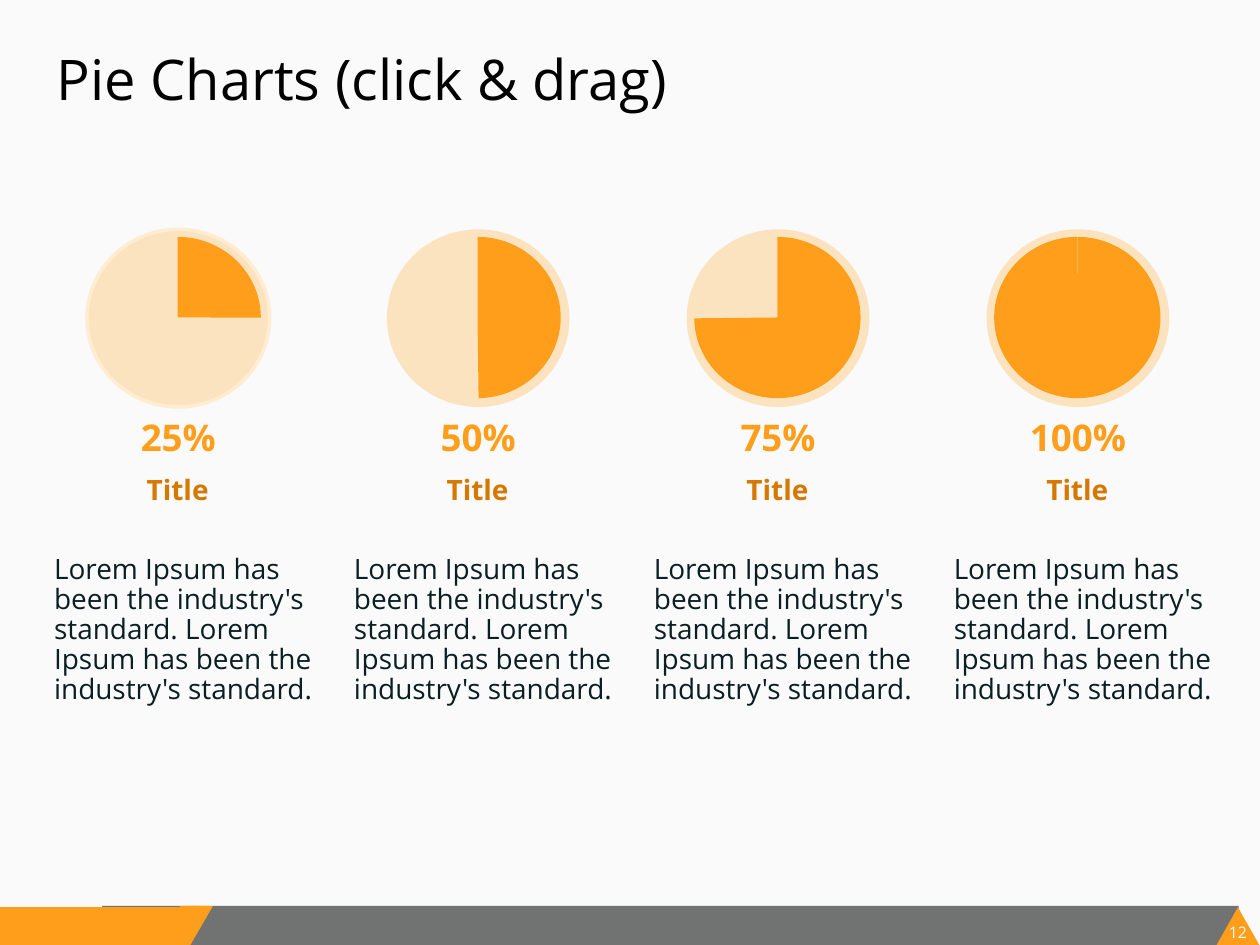
from dataclasses import dataclass

from lxml.etree import SubElement
from pptx import Presentation
from pptx.dml.color import RGBColor as RGB
from pptx.enum.shapes import MSO_SHAPE as Form
from pptx.enum.text import MSO_ANCHOR as Anchor, MSO_AUTO_SIZE as Fit, PP_ALIGN as Align
from pptx.oxml.ns import qn
from pptx.util import Inches, Pt


@dataclass(frozen=True)
class Theme:
    font: str = "Open Sans"
    back: str = "FAFAFA"
    black: str = "000000"
    ink: str = "0A1F24"
    gray: str = "707372"
    main: str = "FF9E1B"
    dark: str = "D57800"
    pale: str = "FFC56E"
    rim: str = "FFECD1"
    head: int = 32
    share: int = 21
    body: int = 16
    page: int = 9


class Deck:
    def __init__(self, theme):
        self.theme = theme
        self.prs = Presentation()
        self.prs.slide_width, self.prs.slide_height = Inches(10), Inches(7.5)
        self.slide = self.prs.slides.add_slide(self.prs.slide_layouts[5])
        fill = self.slide.background.fill
        fill.solid()
        fill.fore_color.rgb = RGB.from_string(theme.back)

    def shape(self, form, box, color, home=None, alpha=None, rim=None):
        """Draw a preset shape on the slide, or in the group given as home."""
        shapes = (home or self.slide).shapes
        item = shapes.add_shape(form, *map(Inches, box))
        item.shadow.inherit = False
        item.fill.solid()
        item.fill.fore_color.rgb = RGB.from_string(color)
        if alpha:
            tint = item.element.spPr.find(".//" + qn("a:srgbClr"))
            SubElement(tint, qn("a:alpha"), val=str(alpha * 1000))
        if rim:
            item.line.color.rgb = RGB.from_string(rim)
            item.line.width = Pt(2)
        else:
            item.line.fill.background()
        return item

    def style(self, frame, text, size, color, bold=False, align=Align.LEFT,
              inset=(0, 0), space=None, wrap=True):
        """Fill a text frame; inset holds the left and right margins."""
        frame.word_wrap = wrap
        frame.auto_size = Fit.NONE
        frame.vertical_anchor = Anchor.TOP
        frame.margin_left, frame.margin_right = map(Inches, inset)
        frame.margin_top = frame.margin_bottom = 0
        para = frame.paragraphs[0]
        para.text = text
        para.alignment = align
        para.line_spacing = space
        font = para.font
        font.name, font.size, font.bold = self.theme.font, Pt(size), bold
        font.color.rgb = RGB.from_string(color)

    def text(self, box, text, size, color, home=None, **look):
        item = (home or self.slide).shapes.add_textbox(*map(Inches, box))
        self.style(item.text_frame, text, size, color, **look)

    def title(self, box, text):
        item = self.slide.shapes.title
        item.left, item.top, item.width, item.height = map(Inches, box)
        frame = item.text_frame
        self.style(frame, text, self.theme.head, self.theme.black, inset=(0.1, 0.1))
        frame.margin_top = frame.margin_bottom = Inches(0.05)

    def footer(self, page):
        look = self.theme
        self.shape(Form.RECTANGLE, (0.81, 7.19, 9.02, 0.31), look.gray)
        self.shape(Form.RECTANGLE, (0, 7.2, 1.5, 0.31), look.main)
        self.shape(Form.ISOSCELES_TRIANGLE, (9.65, 7.2, 0.35, 0.31), look.main)
        self.text((9.74, 7.32, 0.17, 0.15), page, look.page, look.back,
                  align=Align.CENTER, wrap=False)
        slant = self.shape(Form.PARALLELOGRAM, (1.34, 7.19, 0.35, 0.31), look.main)
        slant.adjustments[0] = 0.58
        slant.rotation = 180
        self.shape(Form.RECTANGLE, (1.43, 7.19, 0.14, 0.13), look.main)

    def pie(self, mid, share, end, rim):
        """Draw a disc, a slice from twelve o'clock to end, and the share below."""
        look = self.theme
        group = self.slide.shapes.add_group_shape()
        self.shape(Form.OVAL, (mid - 0.72, 1.82, 1.45, 1.41), look.pale,
                   group, alpha=42, rim=rim)
        part = self.shape(Form.PIE, (mid - 0.66, 1.88, 1.32, 1.28), look.main, group)
        part.adjustments[0], part.adjustments[1] = 162, end
        self.text((mid - 0.52, 3.33, 1.05, 0.35), share, look.share, look.main,
                  group, bold=True, align=Align.CENTER, space=0.9)

    def column(self, mid, share, end, rim, label, body):
        look = self.theme
        self.text((mid - 1.15, 3.78, 2.3, 0.27), label, look.body, look.dark,
                  bold=True, align=Align.CENTER, inset=(0.1, 0.1), space=0.9)
        self.pie(mid, share, end, rim)
        self.text((mid - 1.18, 4.41, 2.3, 2.14), body, look.body, look.ink,
                  inset=(0.2, 0), space=0.89)


def main():
    look = Theme()
    deck = Deck(look)
    deck.footer("12")
    deck.title((0.35, 0.3, 9.24, 1.25), "Pie Charts (click & drag)")
    body = ("Lorem Ipsum has been the industry's standard. "
            "Lorem Ipsum has been the industry's standard.")
    pies = [("25%", 0, look.rim), ("50%", 53.54, None),
            ("75%", 107.66, None), ("100%", 161.76, None)]
    first, step = 1.41, 2.38
    for i, (share, end, rim) in enumerate(pies):
        deck.column(first + i * step, share, end, rim, "Title", body)
    deck.prs.save("out.pptx")


if __name__ == "__main__":
    main()
